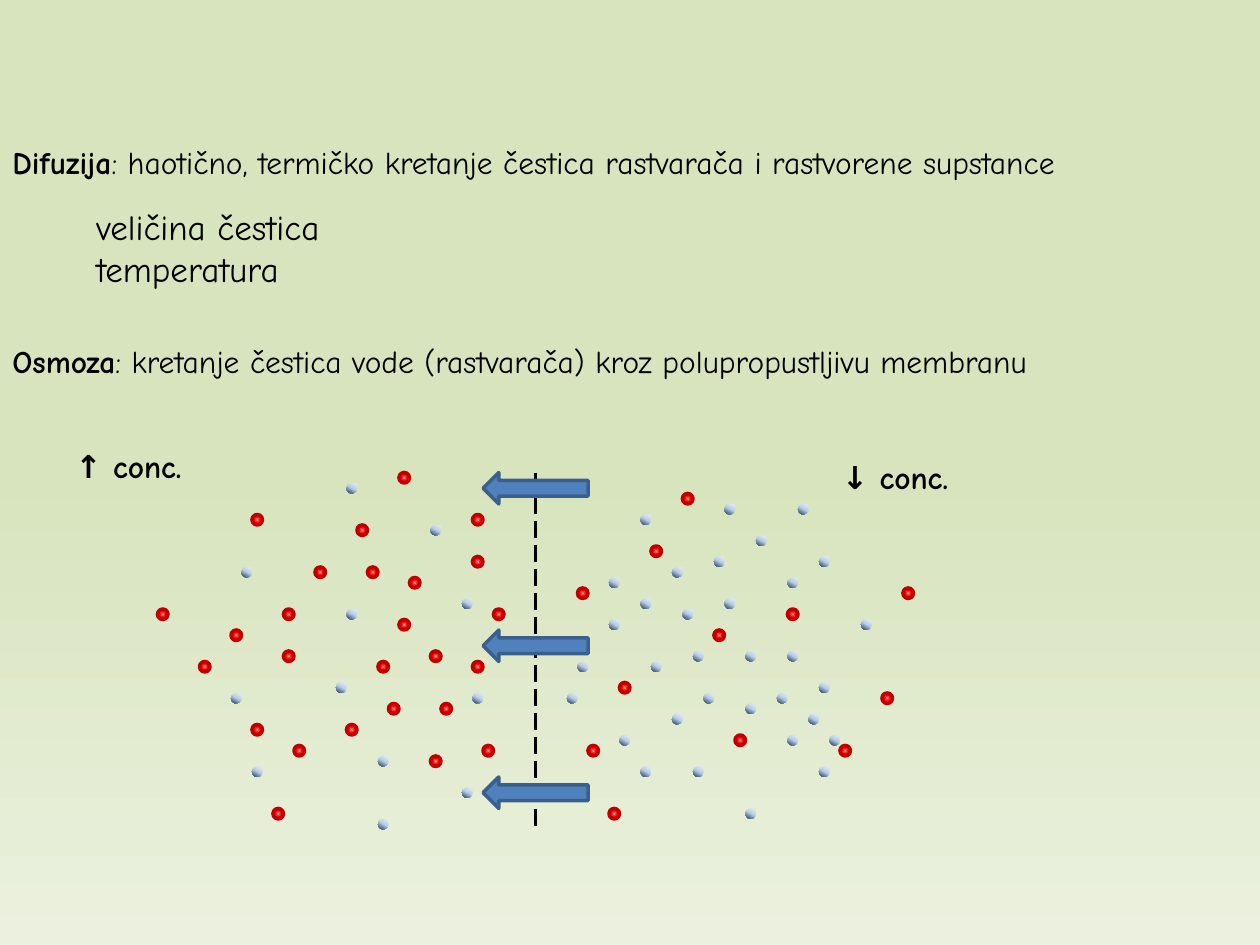
import pptx
import pptx.util
import pptx.oxml
import pptx.oxml.ns
import pptx.dml.color
import pptx.enum.dml
import pptx.enum.shapes
import pptx.enum.text

PX = 9525
CELL = 8
FONT = "Comic Neue"
HUE = {
    "text": "000000", "arrow": "4F81BD", "edge": "3A5F8C", "rim": "C00000",
    "pale": "EBF1DE", "green": "D7E4BD",
    "ice": "DCE6F2", "sky": "B9CDE5", "navy": "254061",
    "pink": "EB9393", "red": "FF0000", "brick": "953735",
}
RGB = {name: pptx.dml.color.RGBColor.from_string(code) for name, code in HUE.items()}
KIND = pptx.enum.shapes.MSO_SHAPE


def blend(fill, node, stops, way):
    fill.gradient()
    old = node.xpath(".//a:gradFill")[0]
    marks = "".join(
        f'<a:gs pos="{at * 1000}"><a:srgbClr val="{HUE[name]}"/></a:gs>' for at, name in stops)
    new = pptx.oxml.parse_xml(
        f'<a:gradFill {pptx.oxml.ns.nsdecls("a")} rotWithShape="1">'
        f'<a:gsLst>{marks}</a:gsLst>{way}</a:gradFill>')
    old.getparent().replace(old, new)


def shape(kind, x, y, w, h, edge=None):
    item = slide.shapes.add_shape(kind, x * PX, y * PX, w * PX, h * PX)
    item.shadow.inherit = False
    if edge:
        item.line.color.rgb = RGB[edge]
        item.line.width = pptx.util.Pt(2)
    else:
        item.line.fill.background()
    return item


deck = pptx.Presentation()
deck.slide_width = 960 * PX
deck.slide_height = 720 * PX
slide = deck.slides.add_slide(deck.slide_layouts[6])
blend(slide.background.fill, slide._element,
      [(0, "pale"), (50, "green"), (100, "green")], '<a:lin ang="16200000" scaled="0"/>')

texts = [
    (0, 104, 927, 38, 18, [[("Difuzija", True), (
        ": haotično, termičko kretanje čestica rastvarača i rastvorene supstance", False)]]),
    (64, 152, 214, 74, 20, [[("veličina čestica", False)], [("temperatura", False)]]),
    (0, 256, 882, 38, 18, [[("Osmoza", True), (
        ": kretanje čestica vode (rastvarača) kroz polupropustljivu membranu", False)]]),
    (48, 336, 103, 38, 18, [[("↑ conc.", True)]]),
    (632, 344, 103, 38, 18, [[("↓ conc.", True)]]),
]
for x, y, w, h, size, lines in texts:
    frame = slide.shapes.add_textbox(x * PX, y * PX, w * PX, h * PX).text_frame
    frame.word_wrap = False
    frame.auto_size = pptx.enum.text.MSO_AUTO_SIZE.SHAPE_TO_FIT_TEXT
    for i, line in enumerate(lines):
        para = frame.add_paragraph() if i else frame.paragraphs[0]
        para.font.name = FONT
        para.font.size = pptx.util.Pt(size)
        para.font.color.rgb = RGB["text"]
        for words, bold in line:
            run = para.add_run()
            run.text = words
            run.font.bold = bold

wall = slide.shapes.add_connector(
    pptx.enum.shapes.MSO_CONNECTOR.CURVE, 408 * PX, 360 * PX, 408 * PX, 632 * PX)
wall.line.color.rgb = RGB["text"]
wall.line.width = pptx.util.Pt(1.25)
wall.line.dash_style = pptx.enum.dml.MSO_LINE.LONG_DASH
wall._element.spPr.append(pptx.oxml.parse_xml(f'<a:effectLst {pptx.oxml.ns.nsdecls("a")}/>'))

water = {
    46: [33], 48: [69, 76], 49: [61], 50: [41], 51: [72], 53: [68, 78],
    54: [23, 64], 55: [58, 75], 57: [44, 61, 69], 58: [33, 65], 59: [58, 82],
    62: [66, 71, 75], 63: [55, 62], 65: [32, 78], 66: [22, 45, 54, 67, 74],
    67: [71], 68: [64, 77], 70: [59, 75, 79], 72: [36], 73: [24, 61, 66, 78],
    75: [44], 77: [71], 78: [36],
}
solute = {
    45: [38], 47: [65], 49: [24, 45], 50: [34], 52: [62], 53: [45],
    54: [30, 35], 55: [39], 56: [55, 86], 58: [15, 27, 47, 75], 59: [38],
    60: [22, 68], 62: [27, 41], 63: [19, 36, 45], 65: [59], 66: [84],
    67: [37, 42], 69: [24, 33], 70: [70], 71: [28, 46, 56, 80], 72: [41],
    77: [26, 58],
}
groups = [
    (water, KIND.TEAR, None, [(14, "ice"), (50, "sky"), (100, "navy")],
     '<a:lin ang="7200000" scaled="0"/>'),
    (solute, KIND.OVAL, "rim", [(0, "pink"), (50, "red"), (100, "brick")],
     '<a:path path="shape"><a:fillToRect l="50000" t="50000" r="50000" b="50000"/></a:path>'),
]
for rows, kind, edge, stops, way in groups:
    for row, cols in rows.items():
        for col in cols:
            dot = shape(kind, col * CELL, row * CELL, CELL, CELL, edge)
            blend(dot.fill, dot._element, stops, way)

for y in (592, 480, 360):
    arrow = shape(KIND.LEFT_ARROW, 368, y, 80, 24, "edge")
    arrow.fill.solid()
    arrow.fill.fore_color.rgb = RGB["arrow"]

deck.save("out.pptx")
